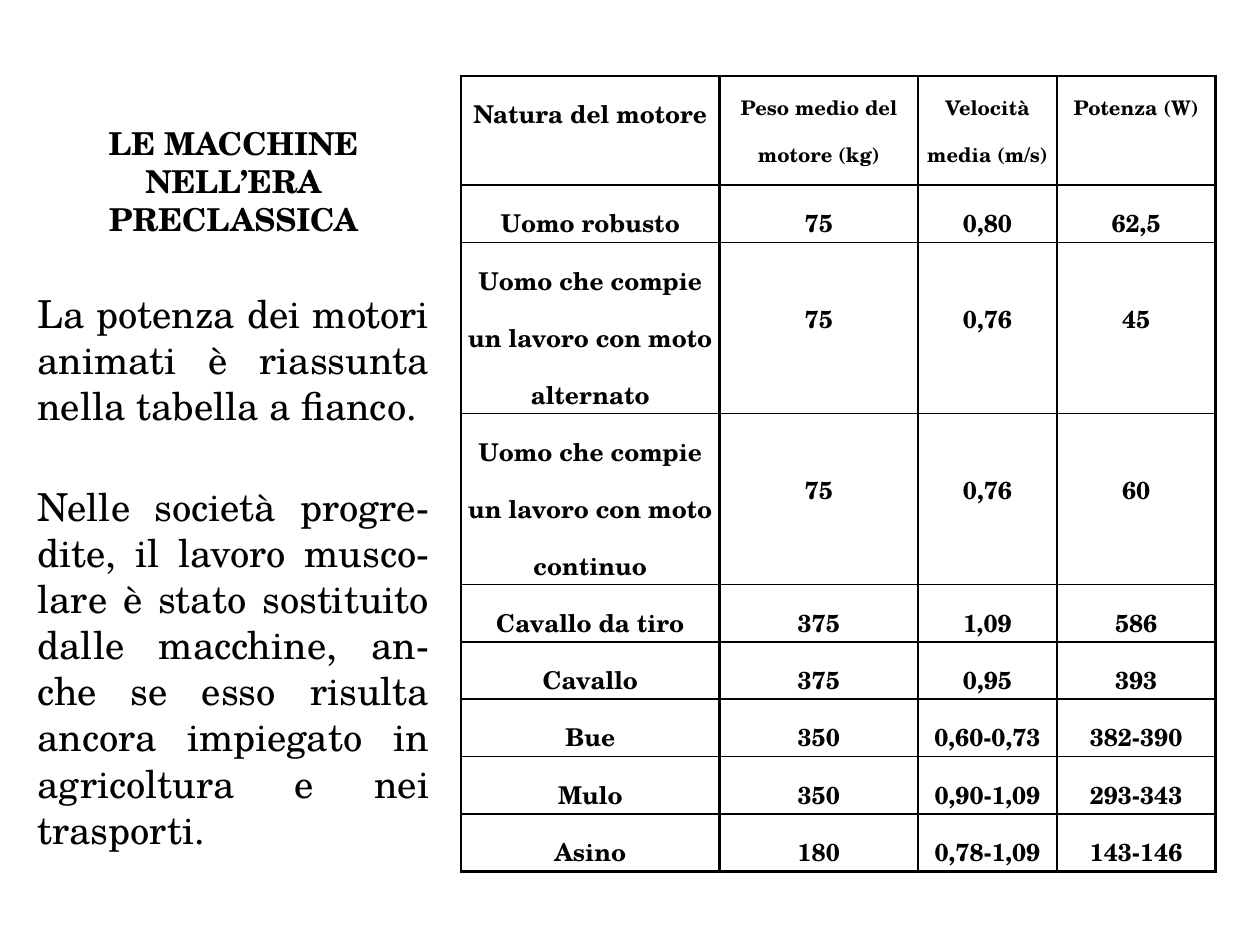
from dataclasses import dataclass

import pptx
import pptx.dml.color
import pptx.enum.text
import pptx.oxml.ns
import pptx.util
from lxml import etree

Pt = pptx.util.Pt
PP_ALIGN = pptx.enum.text.PP_ALIGN
MSO_ANCHOR = pptx.enum.text.MSO_ANCHOR
BLACK = pptx.dml.color.RGBColor(0, 0, 0)
FONT = "TeX Gyre Schola"
THIN, THICK = 1, 1.5


@dataclass
class TableRow:
    height: float
    cells: tuple[str, str, str, str]
    drop: float = 0  # lowers the figures beside a three-line label


COLUMN_WIDTHS = (147.6, 113.6, 79.2, 90.7)
ROW_HEIGHT = 32.8
TALL_HEIGHT = 97.7
DROP = 21.7
ROWS = [
    TableRow(62.4, ("Natura del motore", "Peso medio del motore (kg)",
                    "Velocità media (m/s)", "Potenza (W)")),
    TableRow(ROW_HEIGHT, ("Uomo robusto", "75", "0,80", "62,5")),
    TableRow(TALL_HEIGHT, ("Uomo che compie un lavoro con moto alternato",
                           "75", "0,76", "45"), DROP),
    TableRow(TALL_HEIGHT, ("Uomo che compie un lavoro con moto continuo",
                           "75", "0,76", "60"), DROP),
    TableRow(ROW_HEIGHT, ("Cavallo da tiro", "375", "1,09", "586")),
    TableRow(ROW_HEIGHT, ("Cavallo", "375", "0,95", "393")),
    TableRow(ROW_HEIGHT, ("Bue", "350", "0,60-0,73", "382-390")),
    TableRow(ROW_HEIGHT, ("Mulo", "350", "0,90-1,09", "293-343")),
    TableRow(ROW_HEIGHT, ("Asino", "180", "0,78-1,09", "143-146")),
]

TITLE = "LE MACCHINE NELL’ERA PRECLASSICA"
BODY = [
    "La potenza dei motori animati è riassunta nella tabella a fianco.",
    "Nelle società progre-dite, il lavoro musco-lare è stato sostituito "
    "dalle macchine, an-che se esso risulta ancora impiegato in "
    "agricoltura e nei trasporti.",
]


def format_paragraph(p, size: float, bold: bool, align) -> None:
    p.alignment = align
    for r in p.runs:
        r.font.name = FONT
        r.font.size = Pt(size)
        r.font.bold = bold
        r.font.color.rgb = BLACK


def add_text(s, top: float, height: float, paragraphs: list[str], size: float,
             bold: bool, align, anchor, gap: float = 0) -> None:
    """Add a text box in the left column, with a gap between paragraphs."""
    sp = s.shapes.add_textbox(Pt(14.4), Pt(top), Pt(238), Pt(height))
    tf = sp.text_frame
    tf.word_wrap = True
    tf.vertical_anchor = anchor
    tf.text = "\n".join(paragraphs)
    for i, p in enumerate(tf.paragraphs):
        p.space_before = Pt(gap if i else 0)
        format_paragraph(p, size, bold, align)


def set_borders(cell, top: float, bottom: float) -> None:
    tc_pr = cell._tc.get_or_add_tcPr()
    widths = {"lnL": THICK, "lnR": THICK, "lnT": top, "lnB": bottom}
    for tag, width in widths.items():
        ln = etree.SubElement(tc_pr, pptx.oxml.ns.qn(f"a:{tag}"), w=str(Pt(width)))
        fill = etree.SubElement(ln, pptx.oxml.ns.qn("a:solidFill"))
        etree.SubElement(fill, pptx.oxml.ns.qn("a:srgbClr"), val=str(BLACK))


def add_motor_table(s) -> None:
    height = sum(row.height for row in ROWS)
    frame = s.shapes.add_table(len(ROWS), len(COLUMN_WIDTHS), Pt(263.5), Pt(43.4),
                               Pt(sum(COLUMN_WIDTHS)), Pt(height))
    table = frame.table
    table.first_row = False
    table.horz_banding = False
    for column, width in zip(table.columns, COLUMN_WIDTHS):
        column.width = Pt(width)
    last = len(ROWS) - 1
    for i, row in enumerate(ROWS):
        table.rows[i].height = Pt(row.height)
        for j, text in enumerate(row.cells):
            cell = table.cell(i, j)
            cell.margin_left = cell.margin_right = Pt(3.6)
            cell.margin_top = Pt(row.drop if j else 0)
            cell.margin_bottom = Pt(0)
            set_borders(cell, THICK if i == 0 else THIN, THICK if i == last else THIN)
            cell.fill.background()
            cell.text_frame.text = text
            p = cell.text_frame.paragraphs[0]
            p.line_spacing = 1.5
            format_paragraph(p, 11.5 if i == 0 and j else 14, True, PP_ALIGN.CENTER)


def main() -> None:
    prs = pptx.Presentation()
    prs.slide_width, prs.slide_height = Pt(720), Pt(540)
    s = prs.slides.add_slide(prs.slide_layouts[6])
    add_text(s, 61.2, 84.2, [TITLE], 18, True, PP_ALIGN.CENTER, MSO_ANCHOR.MIDDLE)
    add_text(s, 162, 339.8, BODY, 22, False, PP_ALIGN.JUSTIFY, MSO_ANCHOR.TOP, gap=31)
    add_motor_table(s)
    prs.save("out.pptx")


if __name__ == "__main__":
    main()
